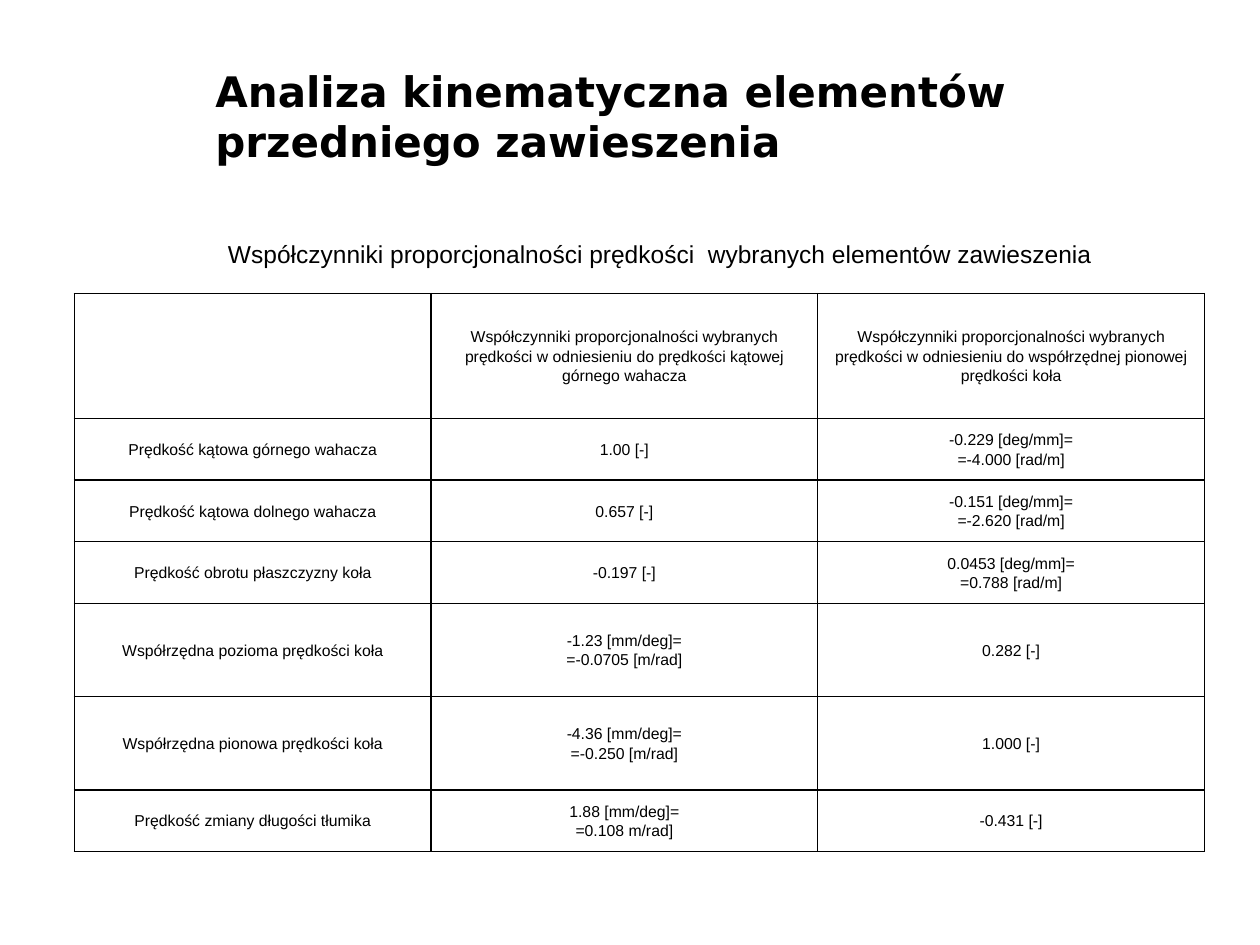
"""Build a slide with a table of suspension velocity coefficients."""
from lxml import etree
from pptx import Presentation
from pptx.dml.color import RGBColor
from pptx.enum.text import MSO_ANCHOR, MSO_AUTO_SIZE, PP_ALIGN
from pptx.oxml.ns import qn
from pptx.util import Inches, Pt

LEFT, CENTER = PP_ALIGN.LEFT, PP_ALIGN.CENTER
MIDDLE = MSO_ANCHOR.MIDDLE
NO_FIT = MSO_AUTO_SIZE.NONE
GROW = MSO_AUTO_SIZE.SHAPE_TO_FIT_TEXT
BLACK, WHITE = "000000", "FFFFFF"

TITLE = "Analiza kinematyczna elementów przedniego zawieszenia"
SUBTITLE = "Współczynniki proporcjonalności prędkości  wybranych elementów zawieszenia"
COLUMN_WIDTHS = [2.83, 3.07, 3.07]
ROWS = [
    (0.99, ["",
            "Współczynniki proporcjonalności wybranych prędkości w odniesieniu do prędkości kątowej górnego wahacza",
            "Współczynniki proporcjonalności wybranych prędkości w odniesieniu do współrzędnej pionowej prędkości koła"]),
    (0.49, ["Prędkość kątowa górnego wahacza", "1.00 [-]", "-0.229 [deg/mm]=\n=-4.000 [rad/m]"]),
    (0.49, ["Prędkość kątowa dolnego wahacza", "0.657 [-]", "-0.151 [deg/mm]=\n=-2.620 [rad/m]"]),
    (0.49, ["Prędkość obrotu płaszczyzny koła", "-0.197 [-]", "0.0453 [deg/mm]=\n=0.788 [rad/m]"]),
    (0.74, ["Współrzędna pozioma prędkości koła", "-1.23 [mm/deg]=\n=-0.0705 [m/rad]", "0.282 [-]"]),
    (0.74, ["Współrzędna pionowa prędkości koła", "-4.36 [mm/deg]=\n=-0.250 [m/rad]", "1.000 [-]"]),
    (0.49, ["Prędkość zmiany długości tłumika", "1.88 [mm/deg]=\n=0.108 m/rad]", "-0.431 [-]"]),
]


def color(value):
    return RGBColor.from_string(value)


def write(frame, text, size, font="Arial", bold=False, align=CENTER, spacing=None, indent=0):
    frame.text = text
    for paragraph in frame.paragraphs:
        paragraph.alignment = align
        if spacing:
            paragraph.line_spacing = Pt(spacing)
        if indent:
            paragraph._p.get_or_add_pPr().set("indent", str(Inches(indent)))
        paragraph.font.size = Pt(size)
        paragraph.font.name = font
        paragraph.font.bold = bold
        paragraph.font.color.rgb = color(BLACK)


def place(shape, left, top, width, height):
    shape.left, shape.top = Inches(left), Inches(top)
    shape.width, shape.height = Inches(width), Inches(height)


def add_borders(cell, width=1):
    properties = cell._tc.get_or_add_tcPr()
    for index, side in enumerate(("a:lnL", "a:lnR", "a:lnT", "a:lnB")):
        line = etree.Element(qn(side), w=str(Pt(width)))
        fill = etree.SubElement(line, qn("a:solidFill"))
        etree.SubElement(fill, qn("a:srgbClr"), val=BLACK)
        properties.insert(index, line)


def add_title(slide):
    title = slide.shapes.title
    place(title, 1.61, 0.6, 7.95, 0.64)
    write(title.text_frame, TITLE, 24, font="DejaVu Sans", bold=True, align=LEFT)
    title.text_frame.auto_size = NO_FIT
    title.text_frame.vertical_anchor = MIDDLE


def add_subtitle(slide):
    box = slide.shapes.add_textbox(Inches(1.41), Inches(1.84), Inches(7.38), Inches(0.34))
    frame = box.text_frame
    frame.word_wrap = False
    frame.auto_size = GROW
    frame.vertical_anchor = MIDDLE
    write(frame, SUBTITLE, 14, indent=0.28)


def add_coefficients(slide):
    heights = [height for height, _ in ROWS]
    table = slide.shapes.add_table(
        len(ROWS), len(COLUMN_WIDTHS), Inches(0.59), Inches(2.33),
        Inches(sum(COLUMN_WIDTHS)), Inches(sum(heights))).table
    for column, width in zip(table.columns, COLUMN_WIDTHS):
        column.width = Inches(width)
    for row, (height, texts) in zip(table.rows, ROWS):
        row.height = Inches(height)
        for cell, text in zip(row.cells, texts):
            cell.margin_left = cell.margin_right = Inches(0.07)
            cell.margin_top = cell.margin_bottom = 0
            cell.vertical_anchor = MIDDLE
            cell.fill.solid()
            cell.fill.fore_color.rgb = color(WHITE)
            add_borders(cell)
            write(cell.text_frame, text, 9, spacing=11)


def main():
    presentation = Presentation()
    presentation.slide_width, presentation.slide_height = Inches(10), Inches(7.5)
    slide = presentation.slides.add_slide(presentation.slide_layouts[5])
    add_title(slide)
    add_subtitle(slide)
    add_coefficients(slide)
    presentation.save("out.pptx")


if __name__ == "__main__":
    main()
